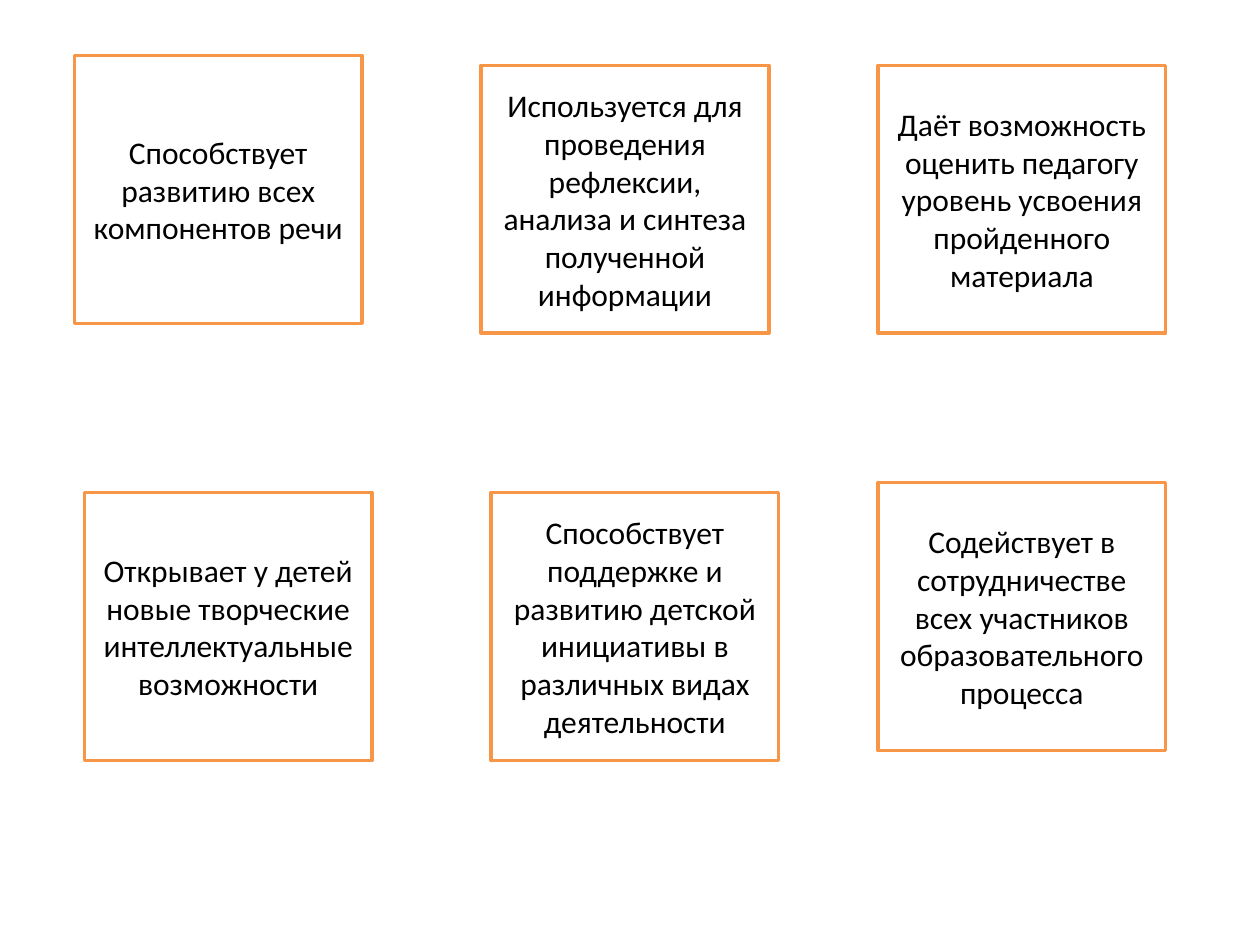
import pptx
import pptx.util
import pptx.dml.color
import pptx.enum.shapes
import pptx.enum.text

Cm = pptx.util.Cm
ORANGE = pptx.dml.color.RGBColor(0xF7, 0x96, 0x46)
WHITE = pptx.dml.color.RGBColor(0xFF, 0xFF, 0xFF)
BLACK = pptx.dml.color.RGBColor(0, 0, 0)

WIDE, HIGH = 5.8, 5.4
CARDS = [
    (1.5, 1.12, "Способствует развитию всех компонентов речи"),
    (9.7, 1.32, "Используется для проведения рефлексии, анализа и синтеза полученной информации"),
    (17.7, 1.32, "Даёт возможность оценить педагогу уровень усвоения пройденного материала"),
    (1.7, 9.93, "Открывает у детей новые творческие интеллектуальные возможности"),
    (9.9, 9.93, "Способствует поддержке и развитию детской инициативы в различных видах деятельности"),
    (17.7, 9.73, "Содействует в сотрудничестве всех участников образовательного процесса"),
]


def add_card(slide, left, top, width, height, text):
    """Draw one outlined card with centred text in the given box."""
    card = slide.shapes.add_shape(
        pptx.enum.shapes.MSO_SHAPE.RECTANGLE,
        Cm(left), Cm(top), Cm(width), Cm(height))
    card.shadow.inherit = False
    card.fill.solid()
    card.fill.fore_color.rgb = WHITE
    card.line.color.rgb = ORANGE
    card.line.width = pptx.util.Pt(2)
    frame = card.text_frame
    frame.word_wrap = True
    frame.vertical_anchor = pptx.enum.text.MSO_ANCHOR.MIDDLE
    frame.text = text
    para = frame.paragraphs[0]
    para.alignment = pptx.enum.text.PP_ALIGN.CENTER
    font = para.runs[0].font
    font.name = "Calibri"
    font.size = pptx.util.Pt(18)
    font.color.rgb = BLACK


def main():
    """Build the slide of six cards and save it."""
    deck = pptx.Presentation()
    deck.slide_width, deck.slide_height = Cm(25.4), Cm(19.05)
    slide = deck.slides.add_slide(deck.slide_layouts[6])
    for left, top, text in CARDS:
        add_card(slide, left, top, WIDE, HIGH, text)
    deck.save("out.pptx")


if __name__ == "__main__":
    main()
